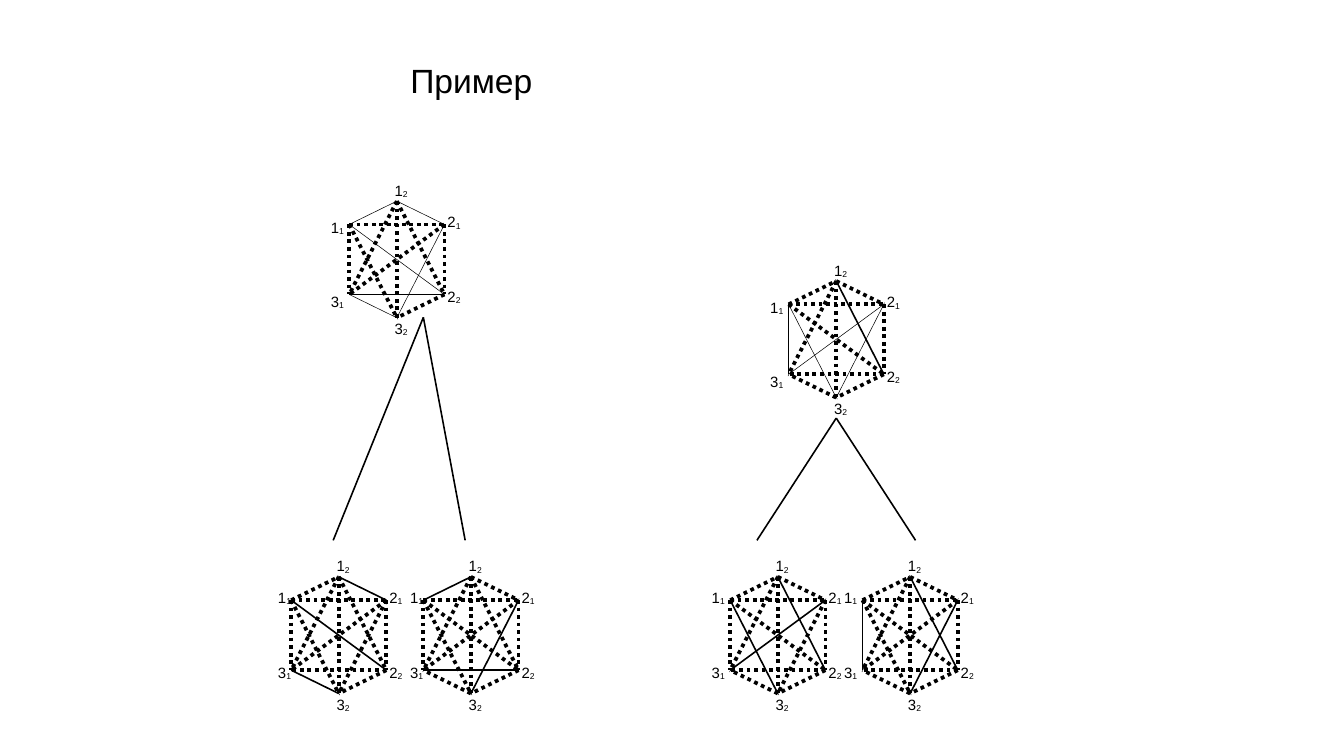
from dataclasses import dataclass
from itertools import combinations

from lxml.etree import SubElement
from pptx import Presentation
from pptx.dml.color import RGBColor
from pptx.enum.dml import MSO_LINE
from pptx.enum.shapes import MSO_CONNECTOR
from pptx.enum.text import MSO_ANCHOR, MSO_AUTO_SIZE, PP_ALIGN
from pptx.oxml.ns import qn
from pptx.slide import Slide
from pptx.text.text import Font
from pptx.util import Pt

Point = tuple[float, float]

BLACK = "000000"
FONT = "Arial"
THIN, BOLD = 0.28, 0.85
HALF_WIDTH, SHOULDER, APEX = 25.5, 18.75, 31.25
LABEL_WIDTH, LABEL_HEIGHT = 28.08, 18

# Vertices of a hexagon, relative to its centre; "12" is digit 1 with index 2
VERTICES: dict[str, Point] = {
    "11": (-HALF_WIDTH, -SHOULDER),
    "12": (0, -APEX),
    "21": (HALF_WIDTH, -SHOULDER),
    "22": (HALF_WIDTH, SHOULDER),
    "32": (0, APEX),
    "31": (-HALF_WIDTH, SHOULDER),
}

# Top left corners of the label boxes, relative to the centre
LABELS: dict[str, Point] = {
    "12": (-8.3, -45.4),
    "21": (20, -28.4),
    "22": (20, 11.4),
    "32": (-8.3, 28.6),
}


@dataclass(frozen=True)
class Graph:
    x: float
    y: float
    left_label: float = -42.5
    left_drop: float = 0
    thin: str = ""
    bold: str = ""

    def labels(self) -> dict[str, Point]:
        return LABELS | {
            "11": (self.left_label, LABELS["21"][1] + self.left_drop),
            "31": (self.left_label, LABELS["22"][1] + self.left_drop),
        }


@dataclass(frozen=True)
class Branch:
    root: Point
    ends: tuple[float, float]


ROW_Y, BRANCH_BOTTOM = 340.3, 289.5
GRAPHS = [
    Graph(212.6, 139, left_drop=2.9, thin="11-12 32-31 12-21 11-22 22-31 21-32"),
    Graph(448, 181.8, left_drop=2.9, thin="11-31 21-31 11-32 21-32", bold="12-22"),
    Graph(181.5, ROW_Y, left_label=-39.7, bold="32-31 12-21 11-22"),
    Graph(252.3, ROW_Y, left_label=-39.7, bold="11-12 22-31 21-32"),
    Graph(416.7, ROW_Y, bold="21-31 12-22 11-32"),
    Graph(487.6, ROW_Y, bold="11-31 12-22 21-32"),
]
BRANCHES = [
    Branch((226.8, 170), (178.5, 249.2)),
    Branch((448, 224), (405.5, 490.5)),
]


def colour(value: str) -> RGBColor:
    return RGBColor.from_string(value)


def style_font(font: Font, size: float) -> None:
    font.name = FONT
    font.size = Pt(size)
    font.color.rgb = colour(BLACK)


def draw_line(page: Slide, start: Point, end: Point, width: float) -> None:
    """Draw a solid line, or a dotted hairline when the width is zero."""
    line = page.shapes.add_connector(
        MSO_CONNECTOR.STRAIGHT, *(Pt(value) for value in start + end))
    line.line.color.rgb = colour(BLACK)
    line.line.width = Pt(width)
    if not width:
        line.line.dash_style = MSO_LINE.ROUND_DOT
    SubElement(line._element.spPr, qn("a:effectLst"))


def draw_label(page: Slide, name: str, left: float, top: float) -> None:
    box = page.shapes.add_textbox(
        Pt(left), Pt(top), Pt(LABEL_WIDTH), Pt(LABEL_HEIGHT))
    box.text_frame.word_wrap = True
    para = box.text_frame.paragraphs[0]
    para.text = name[0]
    index = para.add_run()
    index.text = name[1]
    for span in para.runs:
        style_font(span.font, 8)
    index.font._element.set("baseline", "-8000")


def draw_graph(page: Slide, graph: Graph) -> None:
    thin, bold = graph.thin.split(), graph.bold.split()
    for first, second in combinations(VERTICES, 2):
        edge = f"{first}-{second}"
        width = BOLD if edge in bold else THIN if edge in thin else 0
        start, end = (
            (graph.x + VERTICES[name][0], graph.y + VERTICES[name][1])
            for name in (first, second))
        draw_line(page, start, end, width)
    for name, (left, top) in graph.labels().items():
        draw_label(page, name, graph.x + left, graph.y + top)


def draw_title(page: Slide, text: str) -> None:
    title = page.shapes.title
    title.left, title.top, title.width, title.height = (
        Pt(value) for value in (212.6, 28.3, 411, 27.4))
    frame = title.text_frame
    frame.text = text
    frame.word_wrap = True
    frame.auto_size = MSO_AUTO_SIZE.NONE
    frame.vertical_anchor = MSO_ANCHOR.TOP
    para = frame.paragraphs[0]
    para.alignment = PP_ALIGN.LEFT
    style_font(para.runs[0].font, 18)


def main() -> None:
    deck = Presentation()
    deck.slide_width, deck.slide_height = Pt(720), Pt(405)
    page = deck.slides.add_slide(deck.slide_layouts[5])
    draw_title(page, "Пример")

    # Branches from each upper graph to its two lower graphs
    for branch in BRANCHES:
        for end_x in branch.ends:
            draw_line(page, branch.root, (end_x, BRANCH_BOTTOM), BOLD)

    # Hexagons with all their diagonals
    for graph in GRAPHS:
        draw_graph(page, graph)
    deck.save("out.pptx")


if __name__ == "__main__":
    main()
